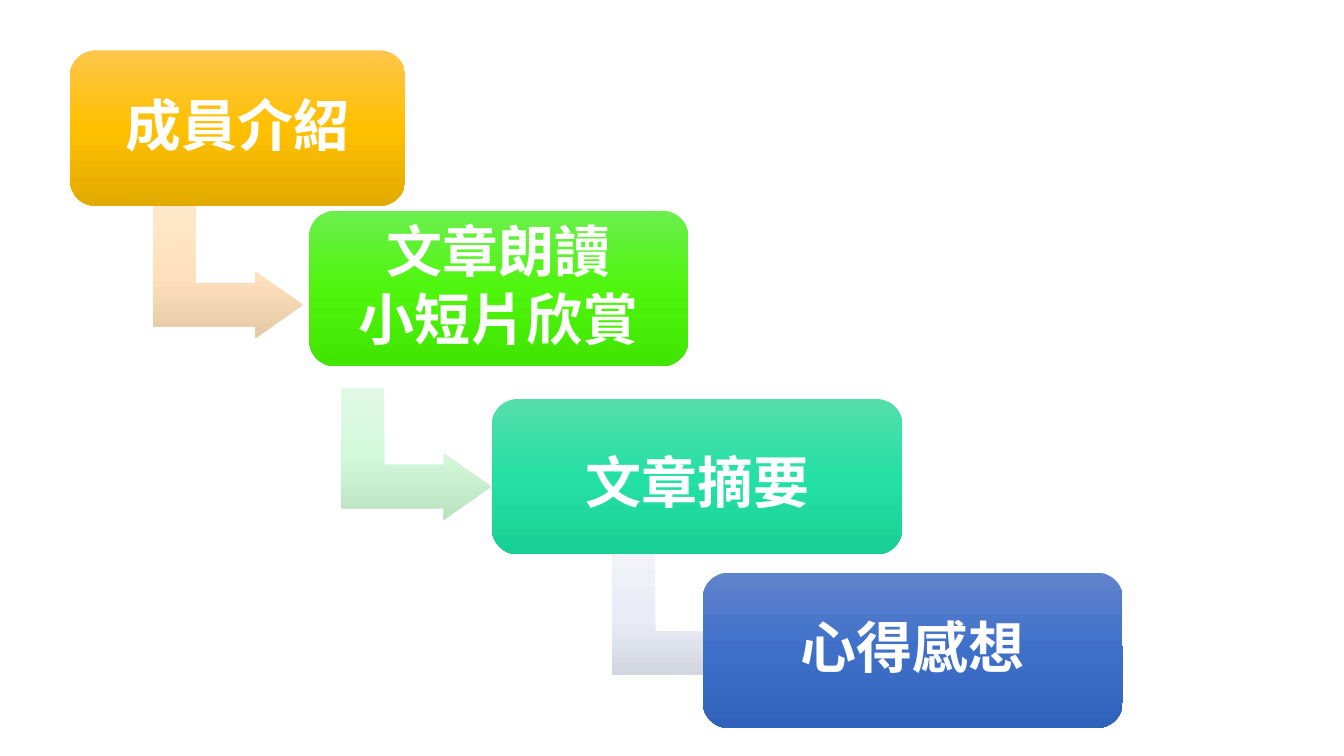
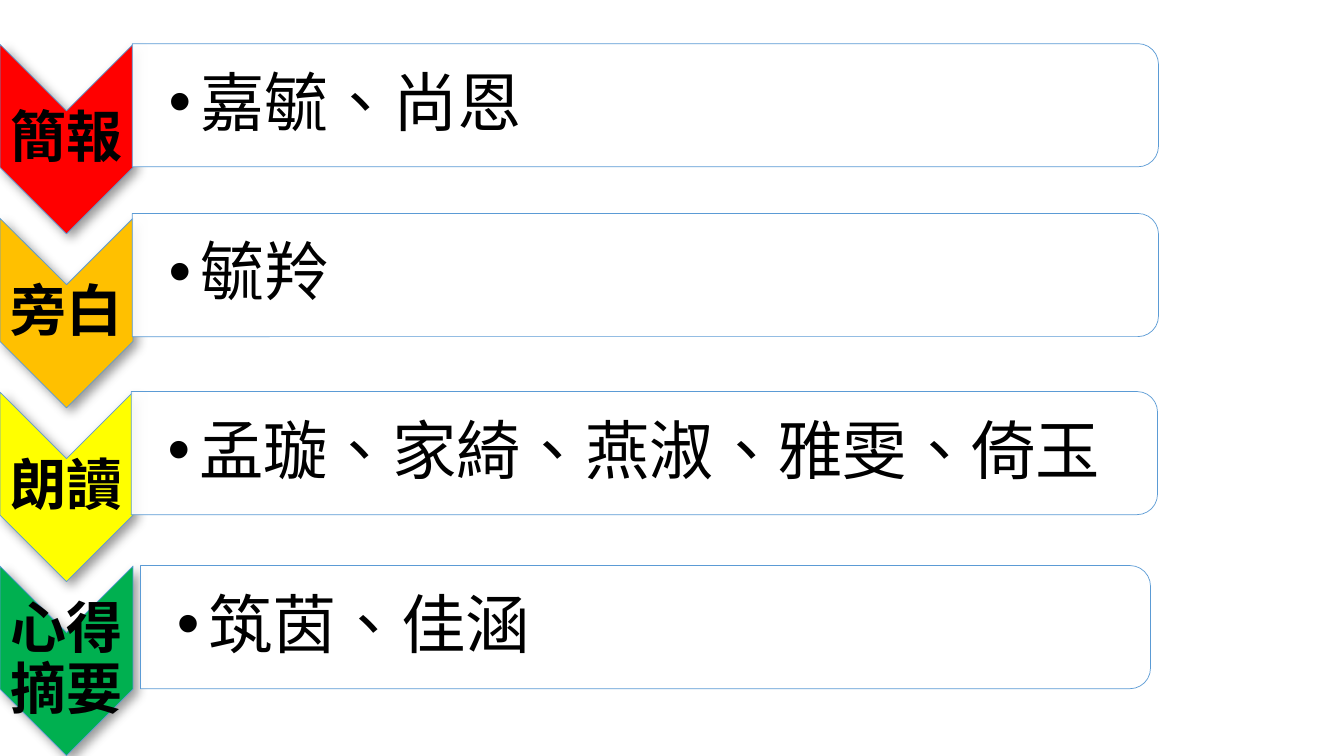
"""Build a two-slide deck: a stepped agenda and a list of who does what."""
from copy import deepcopy
from dataclasses import dataclass

from lxml import etree
from pptx import Presentation
from pptx.dml.color import RGBColor
from pptx.enum.shapes import MSO_SHAPE
from pptx.enum.text import MSO_ANCHOR, PP_ALIGN
from pptx.oxml.ns import qn
from pptx.util import Pt

ROUNDED = MSO_SHAPE.ROUNDED_RECTANGLE
BENT_ARROW = MSO_SHAPE.BENT_UP_ARROW
CHEVRON = MSO_SHAPE.CHEVRON
TWO_ROUNDED = MSO_SHAPE.ROUND_2_SAME_RECTANGLE
MIDDLE = MSO_ANCHOR.MIDDLE
CENTER = PP_ALIGN.CENTER
LEFT = PP_ALIGN.LEFT

WHITE = RGBColor(0xFF, 0xFF, 0xFF)
BLACK = RGBColor(0, 0, 0)
BORDER = RGBColor(0x5B, 0x9B, 0xD5)
RED = RGBColor(0xFF, 0, 0)
AMBER = RGBColor(0xFF, 0xC0, 0)
YELLOW = RGBColor(0xFF, 0xFF, 0)
GREEN = RGBColor(0, 0xB0, 0x50)

ORANGE_BLEND = (RGBColor(0xFF, 0xC6, 0x4B), AMBER, RGBColor(0xE3, 0xAB, 0))
LIME_BLEND = (RGBColor(0x6B, 0xEF, 0x4D), RGBColor(0x4F, 0xF5, 0x0D), RGBColor(0x41, 0xE5, 0))
TEAL_BLEND = (RGBColor(0x55, 0xDD, 0xAB), RGBColor(0x25, 0xE0, 0xA4), RGBColor(0x18, 0xD0, 0x95))
BLUE_BLEND = (RGBColor(0x61, 0x83, 0xCB), RGBColor(0x3E, 0x70, 0xCA), RGBColor(0x30, 0x62, 0xBB))
PEACH_BLEND = (RGBColor(0xFF, 0xE8, 0xCA), RGBColor(0xFF, 0xE2, 0xBD), RGBColor(0xE5, 0xC9, 0xA5))
MINT_BLEND = (RGBColor(0xDF, 0xF9, 0xE4), RGBColor(0xD4, 0xF9, 0xDA), RGBColor(0xB9, 0xE1, 0xC0))
LILAC_BLEND = (RGBColor(0xF1, 0xF3, 0xF9), RGBColor(0xE9, 0xEC, 0xF6), RGBColor(0xCD, 0xD1, 0xDC))

FONT = "Noto Sans CJK JP"
LANGUAGE = "zh-TW"
STEP_HEIGHT = 111
STEP_INSET = 12
ARROW_WIDTH, ARROW_HEIGHT = 107.3, 94.3
ARROW_ADJUSTMENTS = (0.328, 0.25, 0.358)
CHEVRON_TOP, CHEVRON_STEP = 31.7, 124.2
CHEVRON_WIDTH, CHEVRON_HEIGHT = 95, 135.4
BAR_HEIGHT = 88
BULLET_INDENT = 22.5


@dataclass(frozen=True)
class Frame:
    """A rectangle as seen on the slide, in points."""

    left: float
    top: float
    width: float
    height: float


@dataclass(frozen=True)
class TextStyle:
    """The look of the text in one kind of box."""

    size: float
    color: RGBColor
    bold: bool = False
    outlined: bool = False
    bulleted: bool = False
    align: PP_ALIGN = CENTER
    space_after: float = 5


@dataclass(frozen=True)
class Step:
    """One agenda box."""

    lines: tuple
    left: float
    top: float
    width: float
    blend: tuple
    top_inset: float = STEP_INSET


@dataclass(frozen=True)
class Arrow:
    """One bent arrow leading to the next step."""

    left: float
    top: float
    blend: tuple


@dataclass(frozen=True)
class Duty:
    """One task with the members who do it."""

    task: str
    members: str
    color: RGBColor
    left: float
    top: float
    width: float


STEP_STYLE = TextStyle(40, WHITE, bold=True)
TASK_STYLE = TextStyle(40, BLACK, bold=True, outlined=True)
MEMBER_STYLE = TextStyle(46, BLACK, bulleted=True, align=LEFT, space_after=2)

STEPS = (
    Step(("成員介紹",), 50, 36, 239.5, ORANGE_BLEND),
    Step(("文章朗讀", "小短片欣賞"), 221, 150.5, 270.5, LIME_BLEND),
    Step(("文章摘要",), 351.5, 285, 293, TEAL_BLEND, 2 * STEP_INSET),
    Step(("心得感想",), 502, 409, 300, BLUE_BLEND),
)
ARROWS = (
    Arrow(109, 147, PEACH_BLEND),
    Arrow(243.5, 276.8, MINT_BLEND),
    Arrow(437, 395.5, LILAC_BLEND),
)
DUTIES = (
    Duty("簡報", "嘉毓、尚恩", RED, 94.5, 31.2, 733),
    Duty("旁白", "毓羚", AMBER, 94.5, 152.5, 733),
    Duty("朗讀", "孟璇、家綺、燕淑、雅雯、倚玉", YELLOW, 93.8, 279.7, 733),
    Duty("心得摘要", "筑茵、佳涵", GREEN, 100.3, 404, 721.5),
)


def add_plain_shape(slide, kind: MSO_SHAPE, frame: Frame, turned: bool = False):
    """Add a shape without shadow or line, turned a quarter if asked."""
    left, top, width, height = frame.left, frame.top, frame.width, frame.height
    if turned:
        left += (width - height) / 2
        top += (height - width) / 2
        width, height = height, width
    shape = slide.shapes.add_shape(kind, Pt(left), Pt(top), Pt(width), Pt(height))
    shape.rotation = 90 if turned else 0
    shape.shadow.inherit = False
    shape.line.fill.background()
    return shape


def fill_blend(shape, blend: tuple) -> None:
    """Fill a shape with an upright gradient of three colours."""
    shape.fill.gradient()
    gradient = shape._element.spPr.find(qn("a:gradFill"))
    gradient.set("rotWithShape", "0")
    stop_list = gradient.find(qn("a:gsLst"))
    stop_list.append(deepcopy(stop_list[0]))
    for index, (stop, color) in enumerate(zip(shape.fill.gradient_stops, blend)):
        stop.position = index / 2
        stop.color.rgb = color
    shape.fill.gradient_angle = 270


def fill_bordered(shape, color: RGBColor) -> None:
    """Fill a shape with one colour and give it the thin border."""
    shape.fill.solid()
    shape.fill.fore_color.rgb = color
    shape.line.color.rgb = BORDER
    shape.line.width = Pt(0.5)


def set_alpha(color_parent, percent: int) -> None:
    """Make the colour inside an element partly transparent."""
    color = color_parent.find(qn("a:srgbClr"))
    etree.SubElement(color, qn("a:alpha"), val=str(percent * 1000))


def add_drop_shadow(shape) -> None:
    """Give a shape a soft shadow to the lower right."""
    effects = shape._element.spPr.find(qn("a:effectLst"))
    shadow = etree.SubElement(
        effects, qn("a:outerShdw"), blurRad=str(Pt(8)), dist=str(Pt(4)),
        dir=str(45 * 60000), algn="tl", rotWithShape="0",
    )
    etree.SubElement(shadow, qn("a:srgbClr"), val=str(BLACK))
    set_alpha(shadow, 40)


def add_bullet(para) -> None:
    """Give a paragraph a round bullet and a hanging indent."""
    properties = para._p.get_or_add_pPr()
    properties.set("marL", str(Pt(BULLET_INDENT)))
    properties.set("indent", str(-Pt(BULLET_INDENT)))
    etree.SubElement(properties, qn("a:buFont"), typeface="Arial")
    etree.SubElement(properties, qn("a:buChar"), char="•")


def write_lines(box, lines: tuple, style: TextStyle, insets: tuple) -> None:
    """Write one paragraph a line; insets are left, top, right, bottom."""
    frame = box.text_frame
    frame.word_wrap = True
    frame.vertical_anchor = MIDDLE
    frame.margin_left, frame.margin_top, frame.margin_right, frame.margin_bottom = map(Pt, insets)
    for index, line in enumerate(lines):
        para = frame.add_paragraph() if index else frame.paragraphs[0]
        if style.bulleted:
            add_bullet(para)
        para.alignment = style.align
        para.line_spacing = 0.9
        para.space_after = Pt(style.space_after)
        span = para.add_run()
        span.text = line
        span.font.size = Pt(style.size)
        span.font.bold = style.bold
        span.font.color.rgb = style.color
        span.font.name = FONT
        properties = span._r.get_or_add_rPr()
        properties.set("lang", LANGUAGE)
        etree.SubElement(properties, qn("a:ea"), typeface=FONT)
        if style.outlined:
            outline = etree.Element(qn("a:ln"), w=str(Pt(0.75)))
            solid = etree.SubElement(outline, qn("a:solidFill"))
            etree.SubElement(solid, qn("a:srgbClr"), val=str(WHITE))
            properties.insert(0, outline)


def add_label(slide, frame: Frame, text: str, style: TextStyle, left_inset: float) -> None:
    """Add a text box that covers a frame."""
    box = slide.shapes.add_textbox(
        Pt(frame.left), Pt(frame.top), Pt(frame.width), Pt(frame.height)
    )
    write_lines(box, (text,), style, (left_inset, 2, 2, 2))


def draw_arrow(slide, arrow: Arrow) -> None:
    """Draw the bent arrow below a step."""
    frame = Frame(arrow.left, arrow.top, ARROW_WIDTH, ARROW_HEIGHT)
    shape = add_plain_shape(slide, BENT_ARROW, frame, turned=True)
    for index, value in enumerate(ARROW_ADJUSTMENTS):
        shape.adjustments[index] = value
    fill_blend(shape, arrow.blend)


def draw_step(slide, step: Step) -> None:
    """Draw one agenda box with its text."""
    box = add_plain_shape(slide, ROUNDED, Frame(step.left, step.top, step.width, STEP_HEIGHT))
    fill_blend(box, step.blend)
    insets = (STEP_INSET, step.top_inset, STEP_INSET, STEP_INSET)
    write_lines(box, step.lines, STEP_STYLE, insets)


def draw_duty(slide, duty: Duty, row: int) -> None:
    """Draw one task chevron and the bar naming its members."""
    chevron_frame = Frame(0, CHEVRON_TOP + row * CHEVRON_STEP, CHEVRON_WIDTH, CHEVRON_HEIGHT)
    chevron = add_plain_shape(slide, CHEVRON, chevron_frame, turned=True)
    fill_bordered(chevron, duty.color)
    add_drop_shadow(chevron)
    add_label(slide, chevron_frame, duty.task, TASK_STYLE, 2)

    bar_frame = Frame(duty.left, duty.top, duty.width, BAR_HEIGHT)
    bar = add_plain_shape(slide, TWO_ROUNDED, bar_frame, turned=True)
    fill_bordered(bar, WHITE)
    set_alpha(bar._element.spPr.find(qn("a:solidFill")), 90)
    add_label(slide, bar_frame, duty.members, MEMBER_STYLE, 26)


def main() -> None:
    """Build and save the deck."""
    deck = Presentation()
    deck.slide_width, deck.slide_height = Pt(960), Pt(540)
    blank = deck.slide_layouts[6]

    agenda = deck.slides.add_slide(blank)
    for index, step in enumerate(STEPS):
        if index < len(ARROWS):
            draw_arrow(agenda, ARROWS[index])
        draw_step(agenda, step)

    duties = deck.slides.add_slide(blank)
    for row, duty in enumerate(DUTIES):
        draw_duty(duties, duty, row)

    deck.save("out.pptx")


if __name__ == "__main__":
    main()
